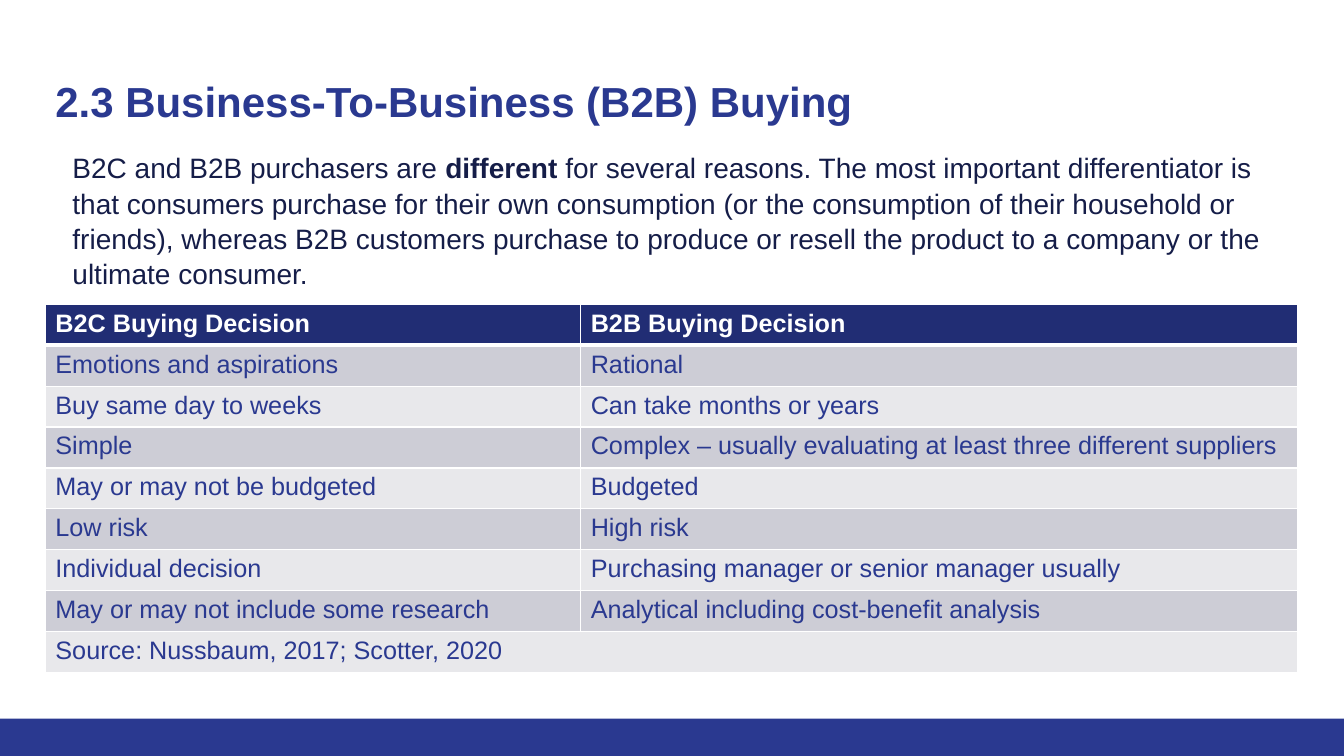
import pptx
import pptx.util
import pptx.dml.color
import pptx.enum.shapes
import pptx.enum.text
import pptx.oxml
from pptx.oxml.ns import nsdecls

Inches = pptx.util.Inches
Pt = pptx.util.Pt

NAVY = "2A3990"
INK = "151D48"
HEAD = "212D74"
BANDS = ("E8E8EB", "CDCDD6")
WHITE = "FFFFFF"


def tint(code):
    return pptx.dml.color.RGBColor.from_string(code)


class Deck:
    font = "Arial"

    def __init__(self, wide, high):
        self.show = pptx.Presentation()
        self.show.slide_width = Inches(wide)
        self.show.slide_height = Inches(high)
        self.page = self.show.slides.add_slide(self.show.slide_layouts[6])

    def runs(self, para, parts, size, color):
        for text, bold in parts:
            run = para.add_run()
            run.text = text
            run.font.name = self.font
            run.font.size = Pt(size)
            run.font.bold = bold
            run.font.color.rgb = tint(color)

    def bar(self, box, color):
        kind = pptx.enum.shapes.MSO_SHAPE.RECTANGLE
        shape = self.page.shapes.add_shape(kind, *map(Inches, box))
        shape.shadow.inherit = False
        shape.fill.solid()
        shape.fill.fore_color.rgb = tint(color)
        shape.line.fill.background()

    def text(self, box, parts, size, color, space, indent=0, before=0):
        frame = self.page.shapes.add_textbox(*map(Inches, box)).text_frame
        frame.word_wrap = True
        frame.vertical_anchor = pptx.enum.text.MSO_ANCHOR.TOP
        frame.margin_left = frame.margin_right = Inches(0.1)
        frame.margin_top = frame.margin_bottom = Inches(0.1)
        para = frame.paragraphs[0]
        para.line_spacing = space
        para.space_before = Pt(before)
        para._p.get_or_add_pPr().set("marL", str(Inches(indent)))
        self.runs(para, parts, size, color)

    def edges(self, cell, low):
        props = cell._tc.get_or_add_tcPr()
        widths = {"lnL": 1, "lnR": 1, "lnT": 1, "lnB": low}
        for spot, (side, width) in enumerate(widths.items()):
            props.insert(spot, pptx.oxml.parse_xml(
                f'<a:{side} {nsdecls("a")} w="{Pt(width)}"><a:solidFill>'
                f'<a:srgbClr val="{WHITE}"/></a:solidFill></a:{side}>'))

    def table(self, left, top, cols, tall, rows):
        grid = self.page.shapes.add_table(
            len(rows), len(cols), Inches(left), Inches(top),
            Inches(sum(cols)), tall * len(rows)).table
        for col, width in zip(grid.columns, cols):
            col.width = Inches(width)
        for y, row in enumerate(rows):
            grid.rows[y].height = tall
            first = y == 0
            for x in range(len(cols)):
                cell = grid.cell(y, x)
                cell.fill.solid()
                cell.fill.fore_color.rgb = tint(HEAD if first else BANDS[y % 2])
                self.edges(cell, 3 if first else 1)
            for x, words in enumerate(row):
                para = grid.cell(y, x).text_frame.paragraphs[0]
                self.runs(para, [(words, first)], 18, WHITE if first else NAVY)
            if len(row) < len(cols):
                grid.cell(y, len(row) - 1).merge(grid.cell(y, len(cols) - 1))


def main():
    deck = Deck(13.33, 7.5)
    deck.bar((0, 7.13, 13.33, 0.37), NAVY)
    deck.text((0.45, 0.6, 12.42, 0.89),
              [("2.3 Business-To-Business (B2B) Buying", True)], 30, NAVY, 1.1)
    deck.text((0.45, 1.38, 12.42, 5.3), [
        ("B2C and B2B purchasers are ", False),
        ("different", True),
        (" for several reasons. The most important differentiator is that "
         "consumers purchase for their own consumption (or the consumption of "
         "their household or friends), whereas B2B customers purchase to "
         "produce or resell the product to a company or the ultimate "
         "consumer.", False),
    ], 20, INK, 1.05, indent=0.17, before=12)
    deck.table(0.45, 3.02, (5.31, 7.11), Pt(29.2), [
        ("B2C Buying Decision", "B2B Buying Decision"),
        ("Emotions and aspirations", "Rational"),
        ("Buy same day to weeks", "Can take months or years"),
        ("Simple",
         "Complex – usually evaluating at least three different suppliers"),
        ("May or may not be budgeted", "Budgeted"),
        ("Low risk", "High risk"),
        ("Individual decision", "Purchasing manager or senior manager usually"),
        ("May or may not include some research",
         "Analytical including cost-benefit analysis"),
        ("Source: Nussbaum, 2017; Scotter, 2020",),
    ])
    deck.show.save("out.pptx")


if __name__ == "__main__":
    main()
